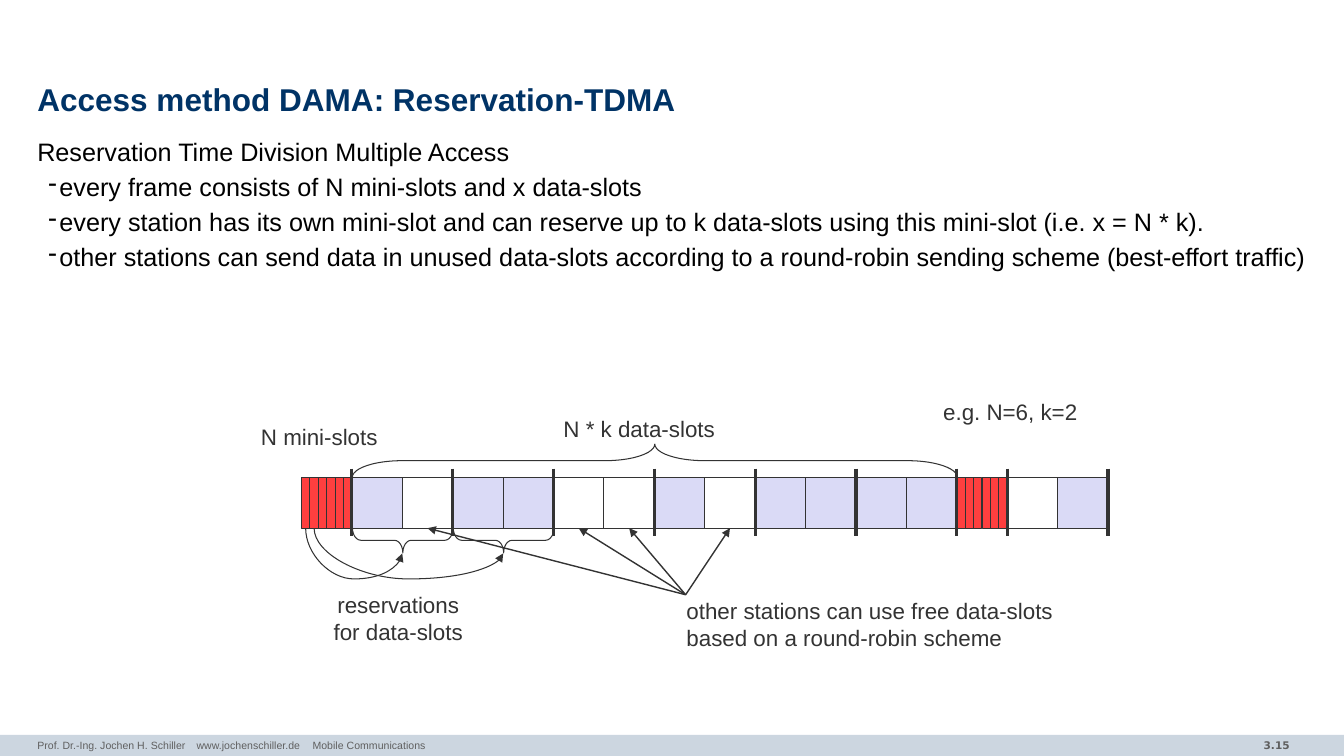
import pptx
import pptx.util
import pptx.dml.color
import pptx.enum.shapes
import pptx.enum.text
import pptx.oxml
import pptx.oxml.ns
import lxml.etree

Inch, Pt = pptx.util.Inches, pptx.util.Pt
Kind = pptx.enum.shapes.MSO_SHAPE
Link = pptx.enum.shapes.MSO_CONNECTOR
Side = pptx.enum.text.PP_ALIGN
Mid = pptx.enum.text.MSO_ANCHOR.MIDDLE
qn = pptx.oxml.ns.qn
INK, GREY, LILAC, WHITE, RED = "333333", "5F5F5F", "DADAF6", "FFFFFF", "FF3F3F"

deck = pptx.Presentation()
deck.slide_width, deck.slide_height = Inch(13.33), Inch(7.5)
slide = deck.slides.add_slide(deck.slide_layouts[6])
shapes = slide.shapes


def write(lines, x, y, w, h, size=16, color=INK, font="Arial", bold=False,
          align=Side.LEFT, anchor=None, pad=(0.1, 0.05), wrap=False,
          space=None, before=0, dash=False, tabs=()):
    """Add a text box; with dash, every line but the first gets a bullet."""
    frame = shapes.add_textbox(Inch(x), Inch(y), Inch(w), Inch(h)).text_frame
    frame.word_wrap = wrap
    frame.margin_left = frame.margin_right = Inch(pad[0])
    frame.margin_top = frame.margin_bottom = Inch(pad[1])
    if anchor is not None:
        frame.vertical_anchor = anchor
    for i, line in enumerate(lines):
        para = frame.paragraphs[0] if i == 0 else frame.add_paragraph()
        para.alignment = align
        if space:
            para.line_spacing = space
        if i and before:
            para.space_before = Pt(before)
        props = para._p.get_or_add_pPr()
        if dash and i:
            props.set("marL", str(Inch(0.22)))
            props.set("indent", str(Inch(-0.11)))
            lxml.etree.SubElement(props, qn("a:buChar")).set("char", "-")
        if tabs:
            stops = lxml.etree.SubElement(props, qn("a:tabLst"))
            for stop in tabs:
                tab = lxml.etree.SubElement(stops, qn("a:tab"))
                tab.set("pos", str(Inch(stop)))
                tab.set("algn", "l")
        run = para.add_run()
        run.text = line
        run.font.name, run.font.size, run.font.bold = font, Pt(size), bold
        run.font.color.rgb = pptx.dml.color.RGBColor.from_string(color)


def draw(kind, a, b, c, d, fill=None, width=0.75, line=INK, end=None):
    """Add a shape (left, top, width, height) or connector (from, to)."""
    box = [Inch(n) for n in (a, b, c, d)]
    joint = isinstance(kind, Link)
    if joint:
        item = shapes.add_connector(kind, *box)
    else:
        item = shapes.add_shape(kind, *box)
        item.shadow.inherit = False
        if fill:
            item.fill.solid()
            item.fill.fore_color.rgb = pptx.dml.color.RGBColor.from_string(fill)
        else:
            item.fill.background()
    if line:
        item.line.color.rgb = pptx.dml.color.RGBColor.from_string(line)
        item.line.width = Pt(width)
    else:
        item.line.fill.background()
    if end:
        tip = lxml.etree.SubElement(item.line._get_or_add_ln(), qn(end))
        tip.set("type", "triangle")
    if joint:
        lxml.etree.SubElement(item._element.spPr, qn("a:effectLst"))
    return item


# Footer band
draw(Kind.RECTANGLE, 0, 7.29, 13.33, 0.21, fill="CCD6E0", line=None)
write(["3.15"], 11.1, 7.28, 1.79, 0.23, size=7.5, color=GREY,
      font="DejaVu Sans", bold=True, align=Side.RIGHT, wrap=True)
write(["Prof. Dr.-Ing. Jochen H. Schiller\twww.jochenschiller.de\tMobile Communications"],
      0.37, 7.28, 8.72, 0.22, size=7.5, color=GREY, pad=(0, 0.05),
      wrap=True, tabs=(1.58, 2.73))

# Title and body
write(["Access method DAMA: Reservation-TDMA"], 0.37, 0.78, 12.6, 0.47,
      size=22.5, color="003366", bold=True, anchor=Mid, pad=(0, 0),
      wrap=True, space=0.85)
write(["Reservation Time Division Multiple Access",
       "every frame consists of N mini-slots and x data-slots",
       "every station has its own mini-slot and can reserve up to k data-slots "
       "using this mini-slot (i.e. x = N * k).",
       "other stations can send data in unused data-slots according to a "
       "round-robin sending scheme (best-effort traffic)"],
      0.37, 1.35, 12.6, 5.74, size=18, color="000000", pad=(0, 0),
      wrap=True, space=1.02, before=2.8, dash=True)

# Slot row: M is a group of mini-slots, D a taken and F a free data-slot
LEFT, TOP, SLOT, MINI = 2.99, 4.74, 0.5, 6
BASE = TOP + SLOT
free = []
for i, mark in enumerate("MDFDDFFDFDDDDMFD"):
    x = LEFT + i * SLOT
    if mark == "M":
        for j in range(MINI):
            draw(Kind.RECTANGLE, x + j * SLOT / MINI, TOP, SLOT / MINI, SLOT, fill=RED)
    else:
        cell = draw(Kind.RECTANGLE, x, TOP, SLOT, SLOT,
                    fill=WHITE if mark == "F" else LILAC)
        if mark == "F":
            free.append(cell)

# Bold marks between stations
for i in (1, 3, 5, 7, 9, 11, 13, 14, 16):
    x = LEFT + i * SLOT
    draw(Link.STRAIGHT, x, TOP - 0.09, x, BASE + 0.08, width=2.25)

# Arrows to the free slots of the first frame
for cell in free[:4]:
    arrow = draw(Link.STRAIGHT, 4, BASE, 6.8, 5.9, width=1, end="a:headEnd")
    arrow.begin_connect(cell, 2)

# Braces under the reserved slots, each with a curve from its mini-slot
for i in range(2):
    mid = LEFT + (2 + 2 * i) * SLOT
    brace = draw(Kind.RIGHT_BRACE, mid - 0.12, 4.86, 0.25, 2 * SLOT)
    brace.rotation = 90
    brace.adjustments[0] = 0.333
    start = LEFT + (i + 0.5) * SLOT / MINI
    span, drop = mid - start, 0.25
    cx, cy = (start + mid) / 2, BASE + drop / 2
    curve = draw(Link.CURVE, cx + drop / 2, cy - span / 2,
                 cx - drop / 2, cy + span / 2, end="a:tailEnd")
    form = curve._element.spPr
    form.find(qn("a:xfrm")).set("rot", "16200000")
    bend = lxml.etree.SubElement(form.find(qn("a:prstGeom")).find(qn("a:avLst")), qn("a:gd"))
    bend.set("name", "adj1")
    bend.set("fmla", "val 201400")

# Brace over all data-slots
brace = draw(Kind.RIGHT_BRACE, 6.33, 1.57, 0.33, 12 * SLOT)
brace.rotation = 270
brace.adjustments[0] = 1.5

# Labels
write(["N mini-slots"], 2.49, 4.15, 1.37, 0.37)
write(["N * k data-slots"], 5.49, 4.07, 1.72, 0.37)
write(["e.g. N=6, k=2"], 9.25, 3.9, 1.54, 0.37, align=Side.CENTER, anchor=Mid)
write(["reservations", "for data-slots"], 3.2, 5.82, 1.5, 0.64, align=Side.CENTER)
write(["other stations can use free data-slots", "based on a round-robin scheme"],
      6.71, 5.88, 3.88, 0.64)

deck.save("out.pptx")
